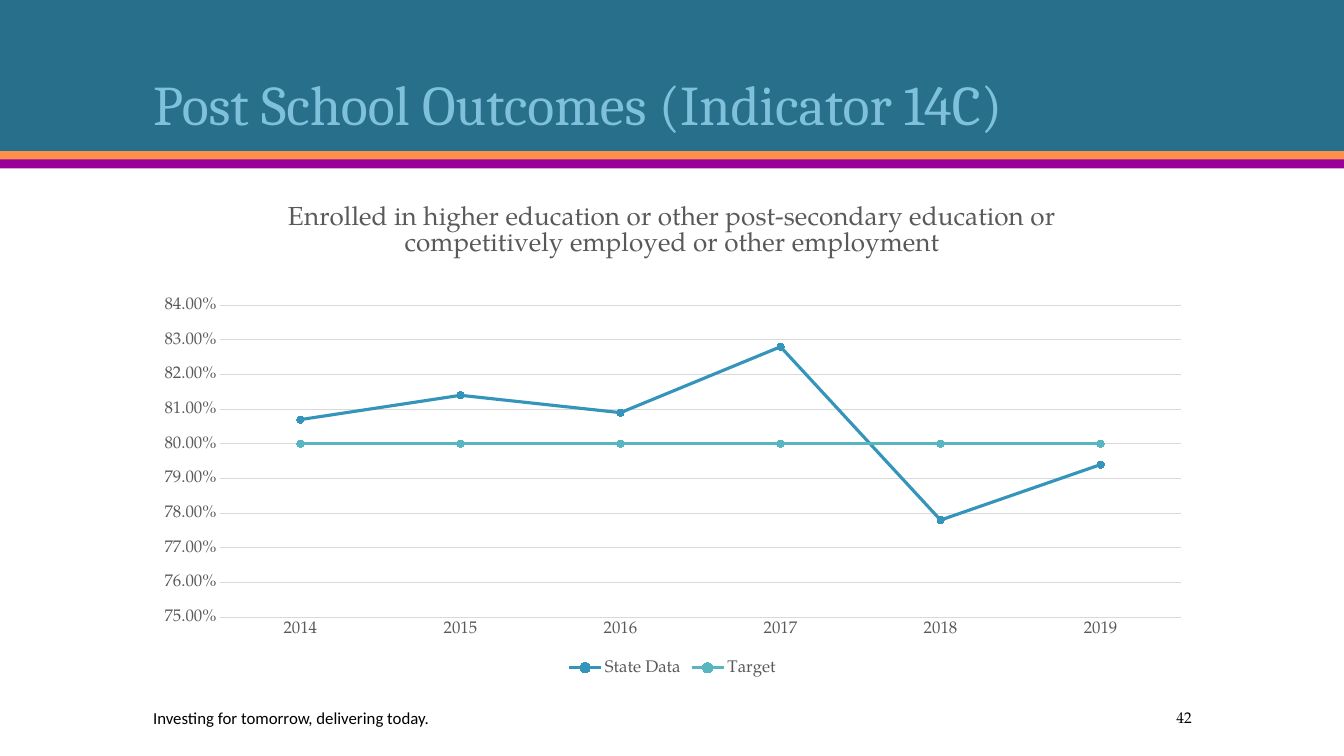
from lxml import etree
from pptx import Presentation
from pptx.chart.data import CategoryChartData
from pptx.dml.color import RGBColor
from pptx.enum.chart import XL_CHART_TYPE, XL_LEGEND_POSITION, XL_MARKER_STYLE, XL_TICK_MARK
from pptx.enum.shapes import MSO_SHAPE
from pptx.enum.text import MSO_ANCHOR, PP_ALIGN
from pptx.oxml.ns import qn
from pptx.util import Inches, Pt

RECTANGLE = MSO_SHAPE.RECTANGLE
LINE_MARKERS = XL_CHART_TYPE.LINE_MARKERS
CIRCLE = XL_MARKER_STYLE.CIRCLE
LEGEND_BOTTOM = XL_LEGEND_POSITION.BOTTOM
NO_TICK = XL_TICK_MARK.NONE
MIDDLE, BOTTOM = MSO_ANCHOR.MIDDLE, MSO_ANCHOR.BOTTOM
LEFT, RIGHT = PP_ALIGN.LEFT, PP_ALIGN.RIGHT

SERIF = "TeX Gyre Pagella"
GREY, GRID = "595959", "D9D9D9"


def color(hex_string):
    return RGBColor.from_string(hex_string)


def style_font(font, name, size, hex_string):
    font.name = name
    font.size = Pt(size)
    font.bold = False
    font.color.rgb = color(hex_string)


deck = Presentation()
deck.slide_width, deck.slide_height = Inches(13.33), Inches(7.5)
page = deck.slides.add_slide(deck.slide_layouts[6])

# Header bands
for top, height, fill in [(0, 1.5, "276F8B"), (1.5, 0.09, "FF914D"), (1.58, 0.09, "990099")]:
    band = page.shapes.add_shape(RECTANGLE, 0, Inches(top), deck.slide_width, Inches(height))
    band.shadow.inherit = False
    band.fill.solid()
    band.fill.fore_color.rgb = color(fill)
    band.line.fill.background()

# Title, footer and page number
texts = [
    ("Post School Outcomes (Indicator 14C)", 1.42, 0.28, 10.5, 1.13, BOTTOM, LEFT, "Cambria", 40, "7FC1DB", 0.9),
    ("Investing for tomorrow, delivering today.", 1.42, 6.97, 6.83, 0.3, MIDDLE, LEFT, "Calibri", 12, "000000", 1.0),
    ("42", 10.42, 6.97, 1.5, 0.3, MIDDLE, RIGHT, SERIF, 11, "000000", 1.0),
]
for text, left, top, width, height, anchor, align, font, size, ink, spacing in texts:
    box = page.shapes.add_textbox(Inches(left), Inches(top), Inches(width), Inches(height))
    box.text_frame.word_wrap = True
    box.text_frame.vertical_anchor = anchor
    para = box.text_frame.paragraphs[0]
    para.text = text
    para.alignment = align
    para.line_spacing = spacing
    style_font(para.runs[0].font, font, size, ink)

# Line chart
data = CategoryChartData(number_format="0.00%")
data.categories = ["2014", "2015", "2016", "2017", "2018", "2019"]
data.add_series("State Data", [0.807, 0.814, 0.809, 0.828, 0.778, 0.794])
data.add_series("Target", [0.8] * 6)
chart = page.shapes.add_chart(
    LINE_MARKERS, Inches(1.42), Inches(1.82), Inches(10.5), Inches(4.93), data
).chart
style_font(chart.font, SERIF, 10, "000000")
chart.plots[0].vary_by_categories = False

for series, hue in zip(chart.plots[0].series, ["3494BA", "58B6C0"]):
    series.smooth = False
    series.format.line.color.rgb = color(hue)
    series.format.line.width = Pt(2.25)
    series.marker.style = CIRCLE
    series.marker.size = 5
    series.marker.format.fill.solid()
    series.marker.format.fill.fore_color.rgb = color(hue)
    series.marker.format.line.color.rgb = color(hue)

# Chart title
chart.has_title = True
title_para = chart.chart_title.text_frame.paragraphs[0]
title_para.text = (
    "Enrolled in higher education or other post-secondary education or "
    "competitively employed or other employment"
)
style_font(title_para.runs[0].font, SERIF, 18.6, GREY)
chart.chart_title.include_in_layout = False

# Axes and legend
years, rates = chart.category_axis, chart.value_axis
for axis in (years, rates):
    axis.major_tick_mark = axis.minor_tick_mark = NO_TICK
    style_font(axis.tick_labels.font, SERIF, 12, GREY)
rates.minimum_scale, rates.maximum_scale, rates.major_unit = 0.75, 0.84, 0.01
rates.tick_labels.number_format = "0.00%"
rates.tick_labels.number_format_is_linked = False
rates.format.line.fill.background()
rates.has_major_gridlines = True
for line in (years.format.line, rates.major_gridlines.format.line):
    line.color.rgb = color(GRID)
    line.width = Pt(0.75)
chart.has_legend = True
chart.legend.position = LEGEND_BOTTOM
chart.legend.include_in_layout = False
style_font(chart.legend.font, SERIF, 12, GREY)

# Plot area placement, as fractions of the chart
plot_area = chart.plots[0]._element.getparent()
for old_layout in plot_area.findall(qn("c:layout")):
    plot_area.remove(old_layout)
layout = etree.Element(qn("c:layout"))
plot_area.insert(0, layout)
manual = etree.SubElement(layout, qn("c:manualLayout"))
for tag, value in [("layoutTarget", "inner"), ("xMode", "edge"), ("yMode", "edge"),
                   ("x", "0.073"), ("y", "0.245"), ("w", "0.907"), ("h", "0.628")]:
    etree.SubElement(manual, qn("c:" + tag)).set("val", value)

deck.save("out.pptx")
